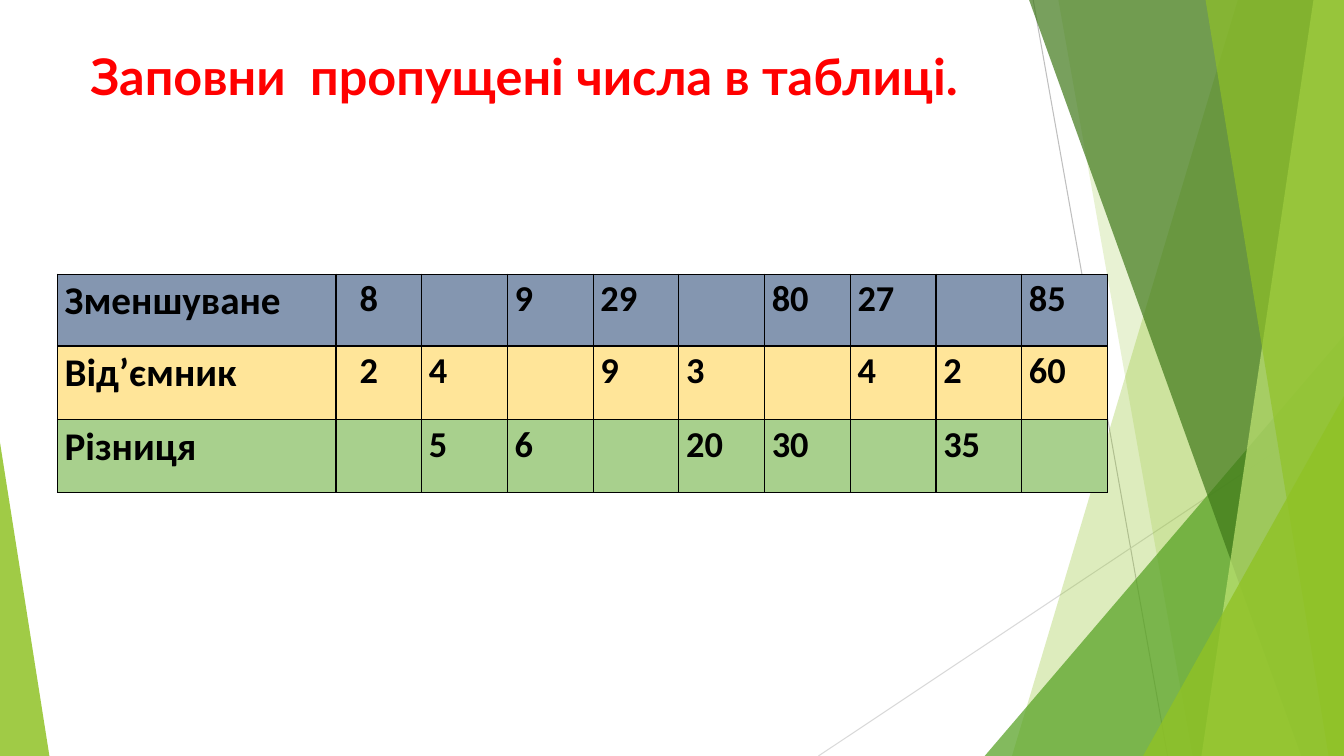
from dataclasses import dataclass
from typing import NamedTuple

from lxml.etree import SubElement
from pptx import Presentation
from pptx.dml.color import RGBColor
from pptx.enum.shapes import MSO_CONNECTOR, MSO_SHAPE
from pptx.enum.text import MSO_ANCHOR, MSO_AUTO_SIZE, PP_ALIGN
from pptx.oxml.ns import qn
from pptx.shapes.autoshape import Shape
from pptx.slide import Slide
from pptx.table import _Cell as Cell
from pptx.text.text import Font
from pptx.util import Pt

SLIDE_WIDTH, SLIDE_HEIGHT = 960, 540


@dataclass(frozen=True)
class Theme:
    title_font: str = "Lato"
    table_font: str = "Calibri"
    title_size: float = 36
    label_size: float = 28
    number_size: float = 26
    title_color: str = "FF0000"
    ink: str = "000000"
    lime: str = "90C226"
    green: str = "54A021"
    dark_green: str = "3F7819"
    pale_lime: str = "C0E474"
    steep_line: str = "BFBFBF"
    shallow_line: str = "D9D9D9"
    minuend: str = "8496B0"
    subtrahend: str = "FFE599"
    difference: str = "A8D08D"


THEME = Theme()


class Ray(NamedTuple):
    start: tuple[float, float]
    end: tuple[float, float]
    color: str


class Band(NamedTuple):
    """A slanted left edge, filled out to the right side of the slide."""
    top_x: float
    bottom_x: float
    color: str
    opacity: int


class Wedge(NamedTuple):
    """A right triangle standing on the bottom of the slide."""
    left: float
    top: float
    width: float
    apex: float
    color: str
    opacity: int


class NumberRow(NamedTuple):
    label: str
    numbers: tuple[str, ...]
    height: float
    color: str


DECORATION = (
    Ray((738, 0), (834, 540), THEME.steep_line),
    Ray((960, 290), (584.6, 540), THEME.shallow_line),
    Band(884.2, 722.9, THEME.lime, 30),
    Band(756, 851.8, THEME.lime, 20),
    Wedge(703.4, 239.8, 256.6, 1, THEME.green, 72),
    Band(735.1, 929.5, THEME.dark_green, 70),
    Band(938.2, 858.2, THEME.pale_lime, 70),
    Band(861.1, 949, THEME.lime, 65),
    Wedge(816.5, 283, 143.5, 1, THEME.lime, 80),
    Wedge(0, 316.1, 35.3, 0, THEME.lime, 85),
)

NUMBER_ROWS = (
    NumberRow("Зменшуване", ("8", "", "9", "29", "", "80", "27", "", "85"), 51.4, THEME.minuend),
    NumberRow("Від’ємник", ("2", "4", "", "9", "3", "", "4", "2", "60"), 52.4, THEME.subtrahend),
    NumberRow("Різниця", ("", "5", "6", "", "20", "30", "", "35", ""), 52.4, THEME.difference),
)
LABEL_WIDTH, NUMBER_WIDTH = 199, 61.25
CELL_MARGIN, FIRST_NUMBER_MARGIN = 5.2, 17


def style_font(font: Font, name: str, size: float, color: str) -> None:
    font.name = name
    font.size = Pt(size)
    font.bold = True
    font.color.rgb = RGBColor.from_string(color)


def paint(shape: Shape, color: str, opacity: int) -> None:
    shape.shadow.inherit = False
    shape.fill.solid()
    shape.fill.fore_color.rgb = RGBColor.from_string(color)
    fill_color = shape.element.spPr.find(qn("a:solidFill")).find(qn("a:srgbClr"))
    SubElement(fill_color, qn("a:alpha"), val=str(opacity * 1000))
    shape.line.fill.background()


def draw_ray(slide: Slide, ray: Ray) -> None:
    ends = (Pt(value) for value in ray.start + ray.end)
    connector = slide.shapes.add_connector(MSO_CONNECTOR.STRAIGHT, *ends)
    connector.line.color.rgb = RGBColor.from_string(ray.color)
    connector.line.width = Pt(0.75)
    SubElement(connector.element.spPr, qn("a:effectLst"))


def draw_band(slide: Slide, band: Band) -> None:
    outline = slide.shapes.build_freeform(Pt(band.top_x), 0)
    corners = ((SLIDE_WIDTH, 0), (SLIDE_WIDTH, SLIDE_HEIGHT), (band.bottom_x, SLIDE_HEIGHT))
    outline.add_line_segments([(Pt(x), Pt(y)) for x, y in corners], close=True)
    paint(outline.convert_to_shape(), band.color, band.opacity)


def draw_wedge(slide: Slide, wedge: Wedge) -> None:
    triangle = slide.shapes.add_shape(
        MSO_SHAPE.ISOSCELES_TRIANGLE, Pt(wedge.left), Pt(wedge.top),
        Pt(wedge.width), Pt(SLIDE_HEIGHT - wedge.top))
    triangle.adjustments[0] = wedge.apex
    paint(triangle, wedge.color, wedge.opacity)


def draw_decoration(slide: Slide) -> None:
    draw = {Ray: draw_ray, Band: draw_band, Wedge: draw_wedge}
    for part in DECORATION:
        draw[type(part)](slide, part)


def place_title(slide: Slide) -> None:
    title = slide.shapes.title
    title.left, title.top, title.width, title.height = Pt(41), Pt(28.8), Pt(852.5), Pt(104.4)
    frame = title.text_frame
    frame.text = "Заповни  пропущені числа в таблиці."
    frame.auto_size = MSO_AUTO_SIZE.NONE
    frame.vertical_anchor = MSO_ANCHOR.TOP
    frame.margin_left = Pt(23.5)
    heading = frame.paragraphs[0]
    heading.alignment = PP_ALIGN.LEFT
    style_font(heading.runs[0].font, THEME.title_font, THEME.title_size, THEME.title_color)
    title.element.getparent().append(title.element)


def add_borders(cell: Cell) -> None:
    properties = cell._tc.get_or_add_tcPr()
    for side in ("a:lnL", "a:lnR", "a:lnT", "a:lnB"):
        border = SubElement(properties, qn(side), w=str(Pt(1)))
        SubElement(SubElement(border, qn("a:solidFill")), qn("a:srgbClr"), val=THEME.ink)


def fill_cell(cell: Cell, text: str, size: float, color: str, left_margin: float) -> None:
    add_borders(cell)
    cell.fill.solid()
    cell.fill.fore_color.rgb = RGBColor.from_string(color)
    cell.margin_left, cell.margin_right = Pt(left_margin), Pt(CELL_MARGIN)
    cell.margin_top = cell.margin_bottom = Pt(0)
    if text:
        cell.text_frame.text = text
        paragraph = cell.text_frame.paragraphs[0]
        paragraph.line_spacing = 1.07
        style_font(paragraph.runs[0].font, THEME.table_font, size, THEME.ink)


def add_number_table(slide: Slide) -> None:
    number_count = len(NUMBER_ROWS[0].numbers)
    table = slide.shapes.add_table(
        len(NUMBER_ROWS), number_count + 1, Pt(41), Pt(195.8),
        Pt(LABEL_WIDTH + number_count * NUMBER_WIDTH),
        Pt(sum(row.height for row in NUMBER_ROWS))).table
    table.first_row = table.horz_banding = False
    for index, column in enumerate(table.columns):
        column.width = Pt(NUMBER_WIDTH if index else LABEL_WIDTH)
    for row_index, row in enumerate(NUMBER_ROWS):
        table.rows[row_index].height = Pt(row.height)
        for index, text in enumerate((row.label, *row.numbers)):
            size = THEME.number_size if index else THEME.label_size
            margin = FIRST_NUMBER_MARGIN if index == 1 else CELL_MARGIN
            fill_cell(table.cell(row_index, index), text, size, row.color, margin)


def main() -> None:
    presentation = Presentation()
    presentation.slide_width, presentation.slide_height = Pt(SLIDE_WIDTH), Pt(SLIDE_HEIGHT)
    slide = presentation.slides.add_slide(presentation.slide_layouts.get_by_name("Title Only"))
    draw_decoration(slide)
    place_title(slide)
    add_number_table(slide)
    presentation.save("out.pptx")


if __name__ == "__main__":
    main()
